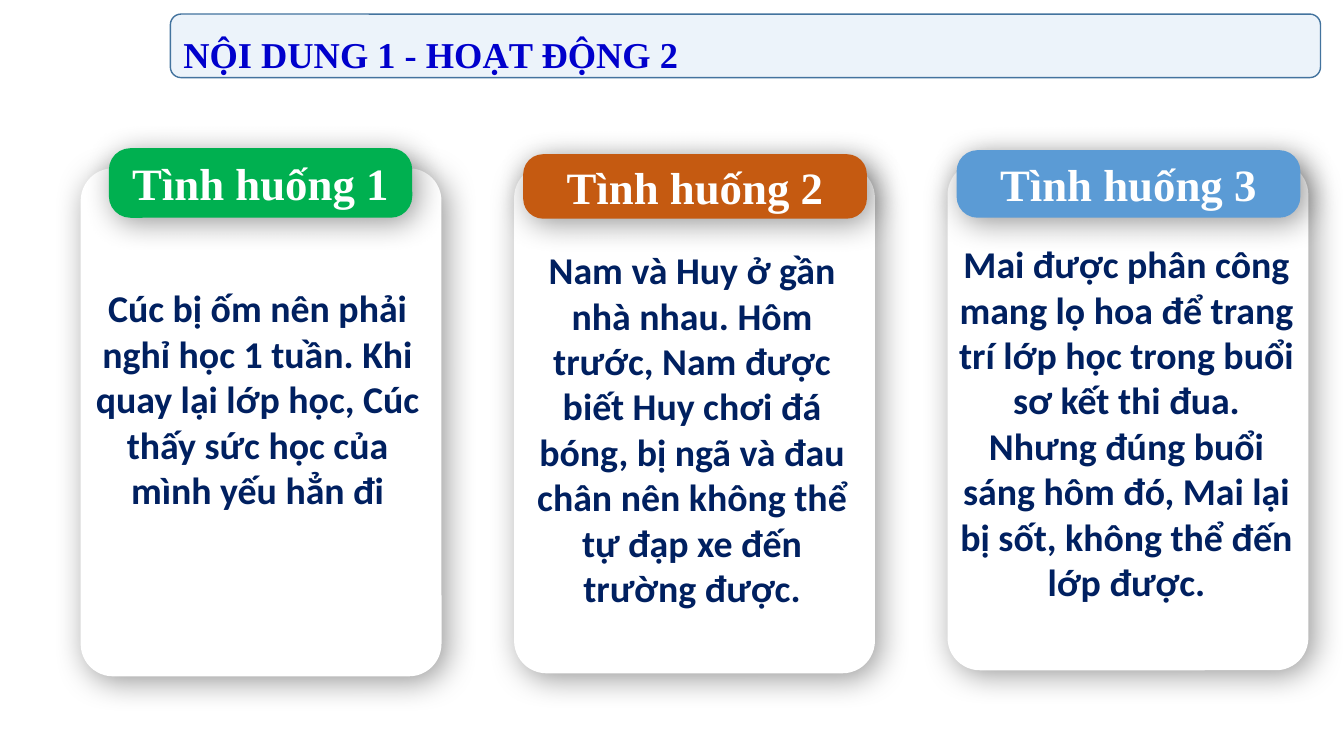
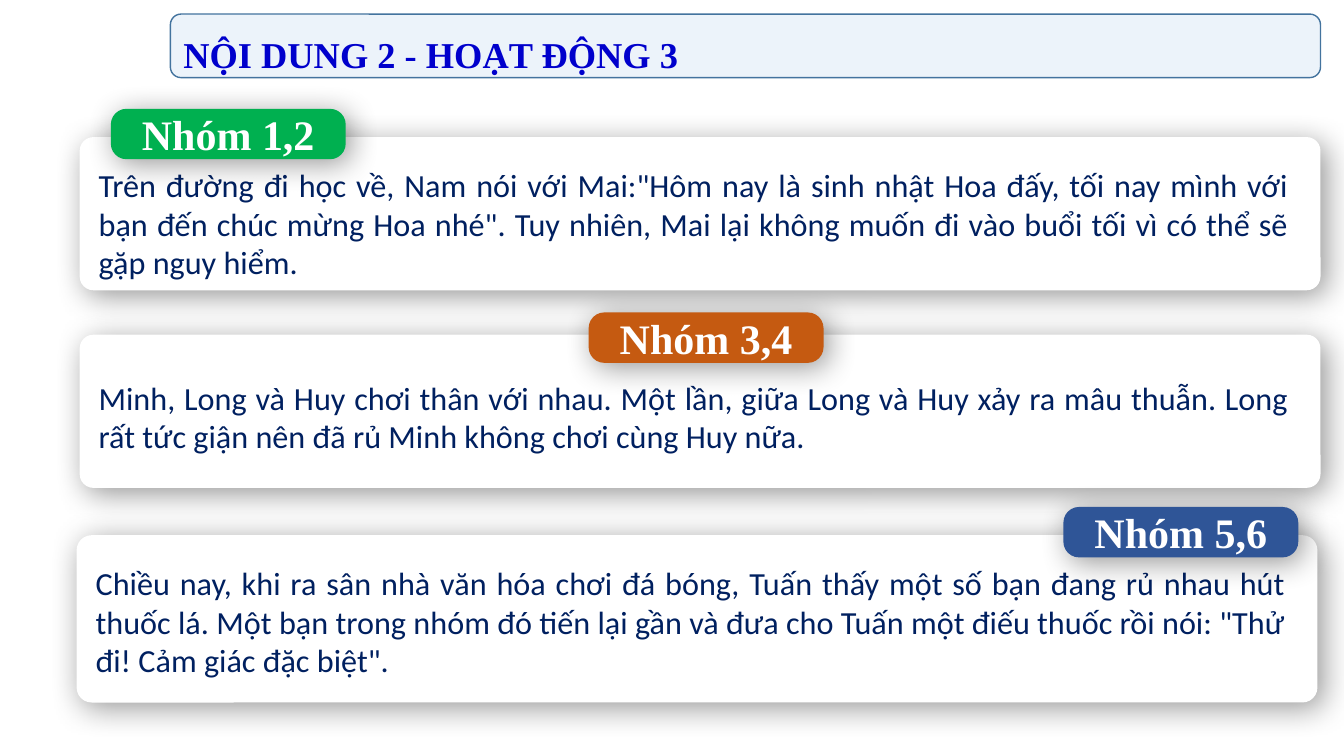
from pptx import Presentation
from pptx.dml.color import RGBColor
from pptx.enum.shapes import MSO_SHAPE
from pptx.enum.text import MSO_ANCHOR, MSO_AUTO_SIZE, PP_ALIGN
from pptx.oxml import parse_xml
from pptx.oxml.ns import nsdecls, qn
from pptx.util import Inches, Pt

# Shared look
WHITE = RGBColor(0xFF, 0xFF, 0xFF)
BAND_FILL = RGBColor(0xEC, 0xF3, 0xFA)
BAND_LINE = RGBColor(0x43, 0x73, 0x9E)
TITLE_BLUE = RGBColor(0x00, 0x00, 0xCC)
NAVY = RGBColor(0x00, 0x20, 0x60)
GREEN = RGBColor(0x00, 0xB0, 0x50)
ORANGE = RGBColor(0xC5, 0x5A, 0x11)
SKY = RGBColor(0x5B, 0x9B, 0xD5)
BLUE = RGBColor(0x2F, 0x55, 0x97)
SERIF, SANS = "Times New Roman", "Calibri"

# Boxes are (column, row, columns, rows) on a grid of square cells
CELL = Inches(0.1)
SLIDE_COLS, SLIDE_ROWS = 133.33, 75
TITLE_BOX = (16.9, 1.4, 114.1, 6.3)
CARD_ROUND, TAG_ROUND = 0.09, 0.31

# Tag, tag colour, tag box, text, text box; boxes are relative to the card
SITUATIONS = [
    ("Tình huống 1", GREEN, (2.8, -2, 30.1, 6.9),
     "Cúc bị ốm nên phải nghỉ học 1 tuần. Khi quay lại lớp học, Cúc thấy "
     "sức học của mình yếu hẳn đi", (0.3, 11.1, 34.5, 28.3)),
    ("Tình huống 2", ORANGE, (0.9, -1.1, 34.1, 6.4),
     "Nam và Huy ở gần nhà nhau. Hôm trước, Nam được biết Huy chơi đá bóng, "
     "bị ngã và đau chân nên không thể tự đạp xe đến trường được.",
     (0.7, 7.6, 33.9, 37.4)),
    ("Tình huống 3", SKY, (0.9, -1.2, 34.1, 6.7),
     "Mai được phân công mang lọ hoa để trang trí lớp học trong buổi sơ kết "
     "thi đua. Nhưng đúng buổi sáng hôm đó, Mai lại bị sốt, không thể đến "
     "lớp được.", (0, 7.3, 35.5, 37.4)),
]
# Card box, tag, tag colour, tag offset, text, text row, text rows
GROUPS = [
    ((7.9, 13.6, 123.1, 15.2), "Nhóm 1,2", GREEN, (3.1, -2.8),
     'Trên đường đi học về, Nam nói với Mai:"Hôm nay là sinh nhật Hoa đấy, '
     'tối nay mình với bạn đến chúc mừng Hoa nhé". Tuy nhiên, Mai lại không '
     'muốn đi vào buổi tối vì có thể sẽ gặp nguy hiểm.', 2.3, 12.6),
    ((7.9, 33.2, 123.1, 15.2), "Nhóm 3,4", ORANGE, (50.5, -2.2),
     "Minh, Long và Huy chơi thân với nhau. Một lần, giữa Long và Huy xảy ra "
     "mâu thuẫn. Long rất tức giận nên đã rủ Minh không chơi cùng Huy nữa.",
     3.8, 8.8),
    ((7.6, 53.1, 123.1, 16.6), "Nhóm 5,6", BLUE, (97.9, -2.8),
     "Chiều nay, khi ra sân nhà văn hóa chơi đá bóng, Tuấn thấy một số bạn "
     "đang rủ nhau hút thuốc lá. Một bạn trong nhóm đó tiến lại gần và đưa "
     'cho Tuấn một điếu thuốc rồi nói: "Thử đi! Cảm giác đặc biệt".',
     2.3, 12.6),
]


def to_emu(box):
    return [round(v * CELL) for v in box]


def inside(card, box):
    return (card[0] + box[0], card[1] + box[1], box[2], box[3])


def write(tf, text, font, size, color, bold=True, align=PP_ALIGN.CENTER):
    tf.word_wrap = True
    p = tf.paragraphs[0]
    p.text = text
    p.alignment = align
    p.font.name, p.font.size, p.font.bold = font, Pt(size), bold
    p.font.color.rgb = color
    return p


def rounded(slide, box, fill, line=None, roundness=None, shadow=False):
    sp = slide.shapes.add_shape(MSO_SHAPE.ROUNDED_RECTANGLE, *to_emu(box))
    if roundness is not None:
        sp.adjustments[0] = roundness
    sp.fill.solid()
    sp.fill.fore_color.rgb = fill
    if line is None:
        sp.line.fill.background()
    else:
        sp.line.color.rgb = line
        sp.line.width = Pt(1)
    sp.shadow.inherit = False
    if shadow:
        effects = sp._element.spPr.find(qn("a:effectLst"))
        effects.append(parse_xml(
            f'<a:outerShdw {nsdecls("a")} blurRad="{Pt(22)}" dist="{Pt(5)}" '
            'dir="2700000" algn="tl" rotWithShape="0"><a:srgbClr val="000000">'
            '<a:alpha val="40000"/></a:srgbClr></a:outerShdw>'))
    sp.text_frame.vertical_anchor = MSO_ANCHOR.MIDDLE
    return sp


def titled_slide(prs, title):
    slide = prs.slides.add_slide(prs.slide_layouts[6])
    tf = rounded(slide, TITLE_BOX, BAND_FILL, BAND_LINE).text_frame
    tf.margin_top = Inches(0.13)
    p = write(tf, title, SERIF, 26, TITLE_BLUE, align=PP_ALIGN.LEFT)
    p.line_spacing = 1.2
    return slide


def tagged_card(slide, card, tag, color, tag_box, tag_size,
                text, text_box, text_size, bold, align):
    # Card, then body text, then the tag over the card's top edge
    rounded(slide, card, WHITE, roundness=CARD_ROUND, shadow=True)
    tf = slide.shapes.add_textbox(*to_emu(inside(card, text_box))).text_frame
    tf.auto_size = MSO_AUTO_SIZE.SHAPE_TO_FIT_TEXT
    write(tf, text, SANS, text_size, NAVY, bold, align)
    sp = rounded(slide, inside(card, tag_box), color,
                 roundness=TAG_ROUND, shadow=True)
    write(sp.text_frame, tag, SERIF, tag_size, WHITE)


def situations_slide(prs):
    slide = titled_slide(prs, "NỘI DUNG 1 - HOẠT ĐỘNG 2")
    for i, (tag, color, tag_box, text, text_box) in enumerate(SITUATIONS):
        card = (8 + 43 * i, 16.7 - 0.3 * i, 35.8, 50.4)
        tagged_card(slide, card, tag, color, tag_box, 32,
                    text, text_box, 27, True, PP_ALIGN.CENTER)


def groups_slide(prs):
    slide = titled_slide(prs, "NỘI DUNG 2 - HOẠT ĐỘNG 3")
    for card, tag, color, offset, text, row, rows in GROUPS:
        tagged_card(slide, card, tag, color, (*offset, 23.3, 5), 30,
                    text, (0.9, row, 120.2, rows), 23, False,
                    PP_ALIGN.JUSTIFY)


def main():
    prs = Presentation()
    prs.slide_width, prs.slide_height = to_emu((SLIDE_COLS, SLIDE_ROWS))
    situations_slide(prs)
    groups_slide(prs)
    prs.save("out.pptx")


if __name__ == "__main__":
    main()
